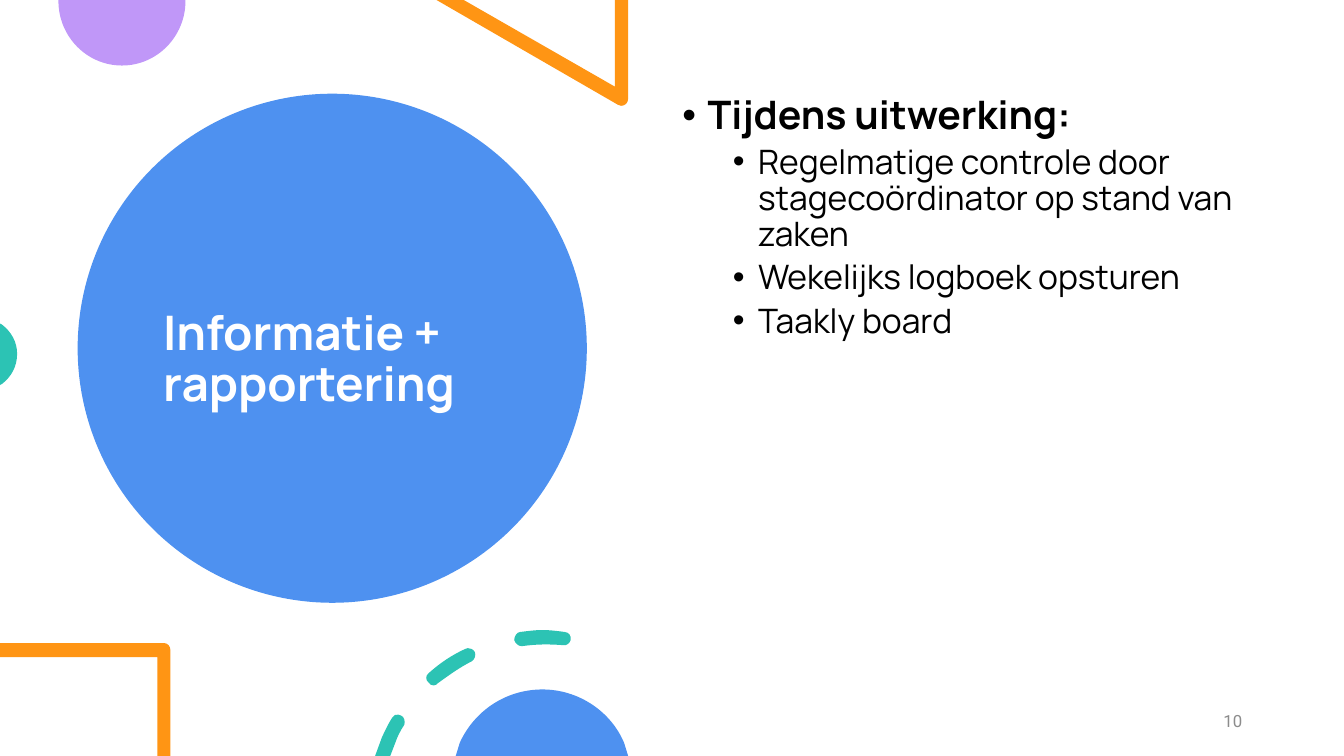
from lxml import etree
from pptx import Presentation
from pptx.dml.color import RGBColor
from pptx.enum.shapes import MSO_SHAPE
from pptx.enum.text import MSO_ANCHOR, PP_ALIGN
from pptx.oxml.ns import qn
from pptx.util import Inches, Pt

OVAL = MSO_SHAPE.OVAL
TOP, MIDDLE = MSO_ANCHOR.TOP, MSO_ANCHOR.MIDDLE
LEFT, RIGHT = PP_ALIGN.LEFT, PP_ALIGN.RIGHT
BLUE, TEAL, ORANGE, PURPLE = "4E91F0", "2CC3B4", "FF9514", "C097F8"


def paint(fill, colour):
    fill.solid()
    fill.fore_color.rgb = RGBColor.from_string(colour)


def add_text(frame, text, *, size, colour="000000", font="Manrope", bold=False,
             align=LEFT, spacing=1.0, before=0, after=0, level=0, indent=None):
    first = frame.paragraphs[0]
    para = frame.add_paragraph() if first.runs else first
    para.alignment = align
    para.level = level
    para.line_spacing = spacing
    para.space_before = Pt(before)
    para.space_after = Pt(after)
    if indent is not None:
        properties = para._p.get_or_add_pPr()
        properties.set("marL", str(Inches(indent)))
        properties.set("indent", str(Inches(-0.25)))
        etree.SubElement(properties, qn("a:buFont")).set("typeface", "Arial")
        etree.SubElement(properties, qn("a:buChar")).set("char", "•")
    span = para.add_run()
    span.text = text
    span.font.name = font
    span.font.size = Pt(size)
    span.font.bold = bold
    paint(span.font.fill, colour)


deck = Presentation()
deck.slide_width = Inches(13.33)
deck.slide_height = Inches(7.5)
page = deck.slides.add_slide(deck.slide_layouts[6])

title_circle = page.shapes.add_shape(
    OVAL, Inches(0.77), Inches(0.93), Inches(5.05), Inches(5.05))
title_circle.shadow.inherit = False
paint(title_circle.fill, BLUE)
title_circle.line.fill.background()

# Each step is a line (x, y) or a curve (two control points, then the end).
purple_circle = [(1.84, 0), (0.58, 0), (0.58, 0.01), (0.58, 0.36, 0.86, 0.65, 1.21, 0.65),
                 (1.56, 0.65, 1.84, 0.36, 1.84, 0.01)]
triangle = [(6.23, 0), (6.1, 0), (6.1, 0.86), (4.6, 0), (4.33, 0), (6.13, 1.04),
            (6.14, 1.05, 6.15, 1.05, 6.16, 1.05), (6.2, 1.05, 6.23, 1.02, 6.23, 0.98)]
teal_circle = [(0, 3.21), (0, 3.82), (0.02, 3.81), (0.11, 3.74, 0.17, 3.64, 0.17, 3.51),
               (0.17, 3.39, 0.11, 3.29, 0.02, 3.22)]
square = [(1.63, 6.38), (0, 6.38), (0, 6.52), (1.56, 6.52), (1.56, 7.5), (1.69, 7.5),
          (1.69, 6.45), (1.69, 6.41, 1.66, 6.38, 1.63, 6.38)]
low_dash = [(3.95, 7.09), (3.93, 7.08, 3.9, 7.1, 3.89, 7.12),
            (3.85, 7.18, 3.82, 7.25, 3.79, 7.31), (3.72, 7.5), (3.87, 7.5), (3.92, 7.37),
            (3.94, 7.31, 3.97, 7.25, 4.01, 7.19), (4.02, 7.16, 4.01, 7.11, 3.98, 7.1),
            (3.97, 7.09, 3.96, 7.09, 3.95, 7.09)]
middle_dash = [(4.64, 6.43), (4.63, 6.43, 4.62, 6.43, 4.61, 6.44),
               (4.48, 6.5, 4.36, 6.58, 4.25, 6.68), (4.22, 6.7, 4.22, 6.75, 4.25, 6.77),
               (4.26, 6.79, 4.28, 6.8, 4.3, 6.8), (4.32, 6.8, 4.33, 6.79, 4.34, 6.78),
               (4.45, 6.7, 4.56, 6.62, 4.68, 6.56), (4.71, 6.54, 4.72, 6.5, 4.71, 6.47),
               (4.69, 6.44, 4.67, 6.43, 4.64, 6.43)]
high_dash = [(5.38, 6.25), (5.31, 6.25, 5.24, 6.26, 5.16, 6.27),
             (5.13, 6.27, 5.1, 6.31, 5.1, 6.35), (5.11, 6.38, 5.14, 6.41, 5.17, 6.41),
             (5.18, 6.41), (5.32, 6.39, 5.45, 6.39, 5.58, 6.4),
             (5.62, 6.41, 5.65, 6.38, 5.66, 6.35), (5.67, 6.31, 5.64, 6.27, 5.6, 6.27),
             (5.53, 6.26, 5.45, 6.25, 5.38, 6.25)]
blue_circle = [(5.38, 6.84), (5.01, 6.84, 4.7, 7.06, 4.56, 7.37), (4.52, 7.5), (6.23, 7.5),
               (6.19, 7.37), (6.06, 7.06, 5.74, 6.84, 5.38, 6.84)]

for colour, contours in [
        (PURPLE, [purple_circle]), (ORANGE, [triangle]), (TEAL, [teal_circle]),
        (ORANGE, [square]), (TEAL, [low_dash, middle_dash, high_dash]), (BLUE, [blue_circle])]:
    builder = None
    for start, *steps in contours:
        corner = [Inches(value) for value in start]
        if builder is None:
            builder = page.shapes.build_freeform(*corner)
        else:
            builder.move_to(*corner)
        points = [(Inches(step[i]), Inches(step[i + 1]))
                  for step in steps for i in range(0, len(step), 2)]
        builder.add_line_segments(points, close=True)
    decoration = builder.convert_to_shape()
    decoration.shadow.inherit = False
    paint(decoration.fill, colour)
    decoration.line.fill.background()

    outline = decoration._element.find(".//" + qn("a:path"))
    lines = iter(outline.findall(qn("a:lnTo")))
    for start, *steps in contours:
        for step in steps:
            line = next(lines)
            if len(step) == 6:
                line.addprevious(curve := etree.Element(qn("a:cubicBezTo")))
                for part in (line, next(lines), next(lines)):
                    curve.append(part[0])
                    outline.remove(part)

frames = []
for left, top, width, height, anchor in [
        (1.52, 1.35, 3.54, 4.45, MIDDLE), (6.67, 0.9, 5.75, 5.35, TOP),
        (11.49, 6.95, 0.93, 0.4, MIDDLE)]:
    box = page.shapes.add_textbox(Inches(left), Inches(top), Inches(width), Inches(height))
    box.text_frame.word_wrap = True
    box.text_frame.vertical_anchor = anchor
    frames.append(box.text_frame)
title, body, page_number = frames

add_text(title, "Informatie + rapportering", size=34, colour="FFFFFF", bold=True, spacing=0.9)
add_text(body, "Tijdens uitwerking:", size=28, bold=True, spacing=0.9, before=10, indent=0.25)
for item in ["Regelmatige controle door stagecoördinator op stand van zaken",
             "Wekelijks logboek opsturen", "Taakly board"]:
    add_text(body, item, size=24, spacing=0.9, before=5, level=1, indent=0.75)
add_text(page_number, "10", size=12, colour="8C8C8C", font="Roboto", align=RIGHT, after=6)

deck.save("out.pptx")
